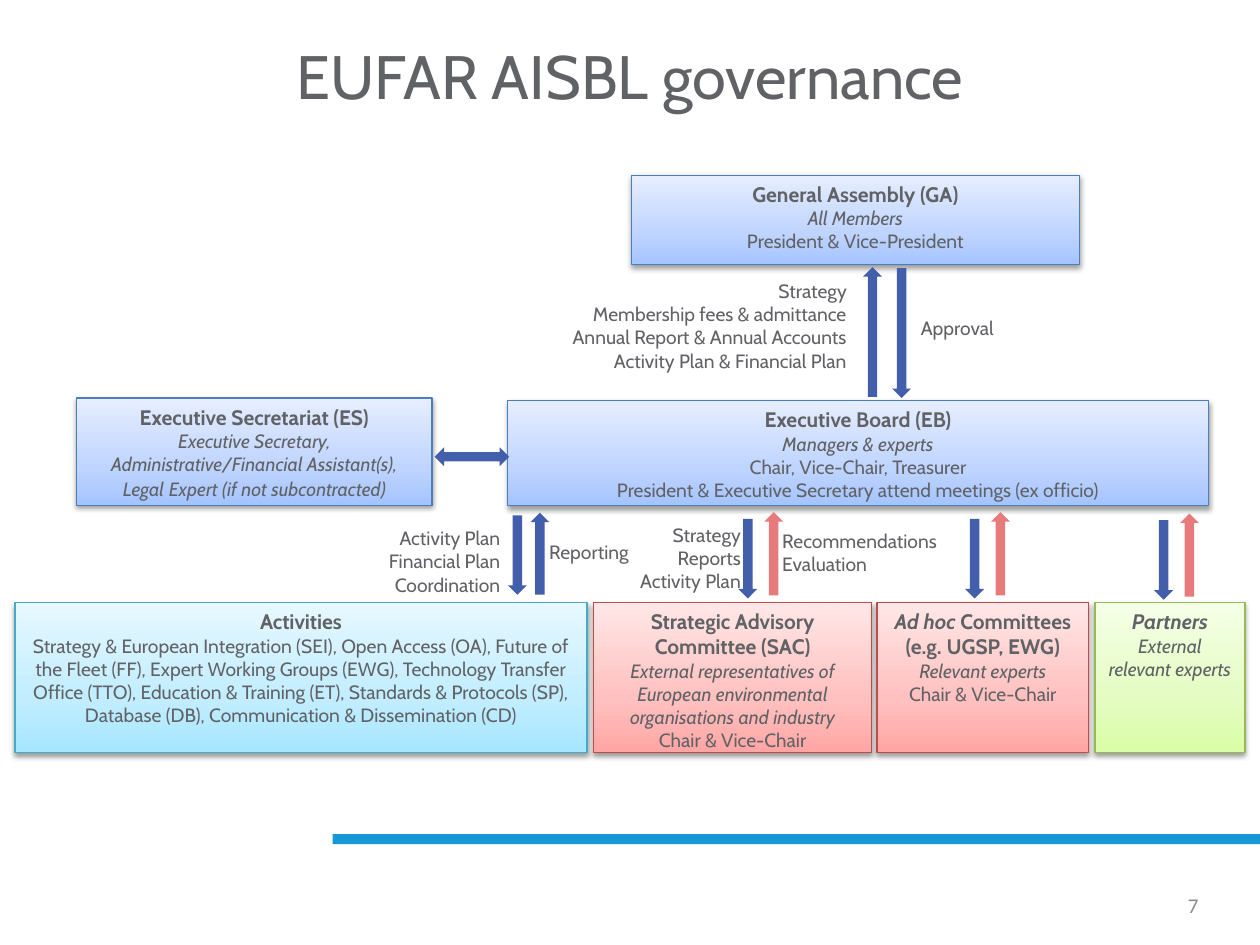
import copy
from dataclasses import dataclass

import pptx
import pptx.dml.color
import pptx.enum.shapes
import pptx.enum.text
import pptx.oxml
import pptx.oxml.ns
import pptx.util
from lxml import etree

Pt = pptx.util.Pt
qn = pptx.oxml.ns.qn
SHAPE = pptx.enum.shapes.MSO_SHAPE
ALIGN = pptx.enum.text.PP_ALIGN
ANCHOR = pptx.enum.text.MSO_ANCHOR

COLORS = {"text": "616265", "number": "8C8C8C", "bar": "1798D4",
          "blue_arrow": "435EAA", "red_arrow": "E77B7B"}
# Gradient from bottom to top, then outline
PALETTES = {
    "blue": ("A4C4FF", "BFD4FF", "E6EEFF", "4B7EBC"),
    "cyan": ("A7E6FF", "C1EDFF", "E7F8FF", "46AAC5"),
    "red": ("FFA6A5", "FFC0BF", "FFE7E7", "BF4C48"),
    "green": ("DAFDA7", "E4FCC2", "F5FFE7", "98B955"),
}
STOPS = (0, 0.35, 1)
ARROW_WIDTH = 10.8
ROW_TOP, ROW_HEIGHT = 344.2, 85.7


@dataclass
class Run:
    text: str
    size: float = 11
    bold: bool = False
    italic: bool = False
    font: str = "Cabin"
    color: str = "text"


@dataclass
class Box:
    palette: str
    x: float
    y: float
    w: float
    h: float
    paragraphs: list[list[Run]]


@dataclass
class Label:
    x: float
    y: float
    w: float
    h: float
    lines: list[str]
    align: ALIGN


@dataclass
class Arrow:
    cx: float
    cy: float
    length: float
    angle: int
    color: str = "blue_arrow"


def head(text: str, italic: bool = False) -> Run:
    return Run(text, 12, True, italic)


def ital(text: str) -> Run:
    return Run(text, italic=True)


def rgb(value: str) -> pptx.dml.color.RGBColor:
    return pptx.dml.color.RGBColor.from_string(value)


def write(tf, paragraphs: list[list[Run]], align: ALIGN) -> None:
    tf.word_wrap = True
    for i, runs in enumerate(paragraphs):
        p = tf.paragraphs[0] if i == 0 else tf.add_paragraph()
        p.alignment = align
        for run in runs:
            r = p.add_run()
            r.text = run.text
            r.font.name, r.font.size = run.font, Pt(run.size)
            r.font.bold, r.font.italic = run.bold, run.italic
            r.font.color.rgb = rgb(COLORS[run.color])


def add_flat(s, kind, x: float, y: float, w: float, h: float, color: str):
    sp = s.shapes.add_shape(kind, Pt(x), Pt(y), Pt(w), Pt(h))
    sp.shadow.inherit = False
    sp.fill.solid()
    sp.fill.fore_color.rgb = rgb(COLORS[color])
    sp.line.fill.background()
    return sp


def add_soft_shadow(sp) -> None:
    sp.shadow.inherit = False
    effects = sp._element.spPr.find(qn("a:effectLst"))
    shadow = etree.SubElement(effects, qn("a:outerShdw"), blurRad=str(Pt(3.1)),
                              dist=str(Pt(1.6)), dir="5400000", rotWithShape="0")
    color = etree.SubElement(shadow, qn("a:srgbClr"), val="000000")
    etree.SubElement(color, qn("a:alpha"), val="38000")


def add_box(s, box: Box) -> None:
    sp = s.shapes.add_shape(SHAPE.RECTANGLE, Pt(box.x), Pt(box.y), Pt(box.w), Pt(box.h))
    *shades, outline = PALETTES[box.palette]
    sp.fill.gradient()
    sp.fill.gradient_angle = 90
    stop_list = sp._element.spPr.find(qn("a:gradFill")).find(qn("a:gsLst"))
    stop_list.insert(1, copy.deepcopy(stop_list[0]))
    for stop, position, shade in zip(sp.fill.gradient_stops, STOPS, shades):
        stop.position = position
        stop.color.rgb = rgb(shade)
    sp.line.color.rgb = rgb(outline)
    sp.line.width = Pt(0.75)
    add_soft_shadow(sp)
    sp.text_frame.vertical_anchor = ANCHOR.TOP
    write(sp.text_frame, box.paragraphs, ALIGN.CENTER)


def add_label(s, label: Label) -> None:
    sp = s.shapes.add_textbox(Pt(label.x), Pt(label.y), Pt(label.w), Pt(label.h))
    write(sp.text_frame, [[Run(line)] for line in label.lines], label.align)


def add_arrow(s, arrow: Arrow) -> None:
    sp = add_flat(s, SHAPE.RIGHT_ARROW, arrow.cx - arrow.length / 2,
                  arrow.cy - ARROW_WIDTH / 2, arrow.length, ARROW_WIDTH, arrow.color)
    sp.rotation = arrow.angle


BOXES = [
    Box("blue", 360.7, 100.1, 256.3, 51.1, [
        [head("General Assembly (GA)")], [ital("All Members")],
        [Run("President & Vice-President")]]),
    Box("blue", 43.9, 227.5, 203, 61.2, [
        [head("Executive Secretariat (ES)")],
        [ital("Executive Secretary, Administrative/Financial Assistant(s), Legal"),
         Run(" ", 12, italic=True), ital("Expert (if not subcontracted)")]]),
    Box("blue", 290.2, 229, 400.3, 59.8, [
        [head("Executive Board (EB)")], [ital("Managers & experts")],
        [Run("Chair, Vice-Chair, Treasurer")],
        [Run("President & Executive Secretary attend meetings (ex officio)")]]),
    Box("cyan", 8.6, ROW_TOP, 326.9, ROW_HEIGHT, [
        [head("Activities")],
        [Run("Strategy & European Integration (SEI), Open Access (OA), Future of the "
             "Fleet (FF), Expert Working Groups (EWG), Technology Transfer Office (TTO), "
             "Education & Training (ET), Standards & Protocols (SP), Database (DB), "
             "Communication & Dissemination (CD)")]]),
    Box("red", 339.1, ROW_TOP, 159.1, ROW_HEIGHT, [
        [head("Strategic Advisory Committee (SAC)")],
        [ital("External representatives of European environmental "
              "organisations and industry")],
        [Run("Chair & Vice-Chair")]]),
    Box("red", 501.1, ROW_TOP, 121, ROW_HEIGHT, [
        [head("Ad hoc ", True), head("Committees")], [head("(e.g. UGSP, EWG)")],
        [ital("Relevant experts")], [Run("Chair & Vice-Chair")]]),
    Box("green", 625.7, ROW_TOP, 85.7, ROW_HEIGHT, [
        [head("Partners", True)], [ital("External relevant experts")]]),
]
LABELS = [
    Label(303.8, 156.2, 187.2, 74.9,
          ["Strategy", "Membership fees & admittance",
           "Annual Report & Annual Accounts", "Activity Plan & Financial Plan"], ALIGN.RIGHT),
    Label(519.1, 177.1, 69.1, 25.2, ["Approval"], ALIGN.LEFT),
    Label(205.2, 297.4, 87.8, 41,
          ["Activity Plan", "Financial Plan", "Coordination"], ALIGN.RIGHT),
    Label(306.7, 305.3, 69.8, 25.2, ["Reporting"], ALIGN.LEFT),
    Label(354.2, 295.2, 76.3, 46.8, ["Strategy", "Reports", "Activity Plan"], ALIGN.RIGHT),
    Label(439.9, 298.8, 117.4, 35.3, ["Recommendations", "Evaluation"], ALIGN.LEFT),
]
UP, DOWN = 270, 90
ARROWS = [
    Arrow(498.6, 189.7, 74.2, UP), Arrow(515.2, 190.4, 74.2, DOWN),
    Arrow(295.6, 317.2, 45.4, DOWN), Arrow(308.5, 316.4, 46.8, UP),
    Arrow(427.3, 319.3, 45.4, DOWN), Arrow(442.1, 316.4, 47.5, UP, "red_arrow"),
    Arrow(556.9, 319.3, 45.4, DOWN), Arrow(571.7, 316.4, 47.5, UP, "red_arrow"),
    Arrow(664.9, 320, 45.4, DOWN), Arrow(679.7, 317.2, 47.5, UP, "red_arrow"),
]


def main() -> None:
    prs = pptx.Presentation()
    prs.slide_width, prs.slide_height = Pt(720), Pt(540)
    s = prs.slides.add_slide(prs.slide_layouts[5])

    # Title
    title = s.shapes.title
    title.left, title.top, title.width, title.height = Pt(36), Pt(-2.2), Pt(648), Pt(90)
    title.text_frame.vertical_anchor = ANCHOR.MIDDLE
    write(title.text_frame, [[Run("EUFAR AISBL governance", 35)]], ALIGN.CENTER)

    # Footer bar and page number
    add_flat(s, SHAPE.RECTANGLE, 190.1, 476.6, 529.9, 5.8, "bar")
    number = s.shapes.add_textbox(Pt(524.2), Pt(502.6), Pt(167.8), Pt(28.8))
    number.text_frame.vertical_anchor = ANCHOR.MIDDLE
    write(number.text_frame, [[Run("7", 12, font="Calibri", color="number")]], ALIGN.RIGHT)

    # Governing bodies, exchanges between them and their arrows
    for box in BOXES:
        add_box(s, box)
    for label in LABELS:
        add_label(s, label)
    for arrow in ARROWS:
        add_arrow(s, arrow)
    add_flat(s, SHAPE.LEFT_RIGHT_ARROW, 248.4, 255.6, 42.5, ARROW_WIDTH, "blue_arrow")

    prs.save("out.pptx")


if __name__ == "__main__":
    main()
